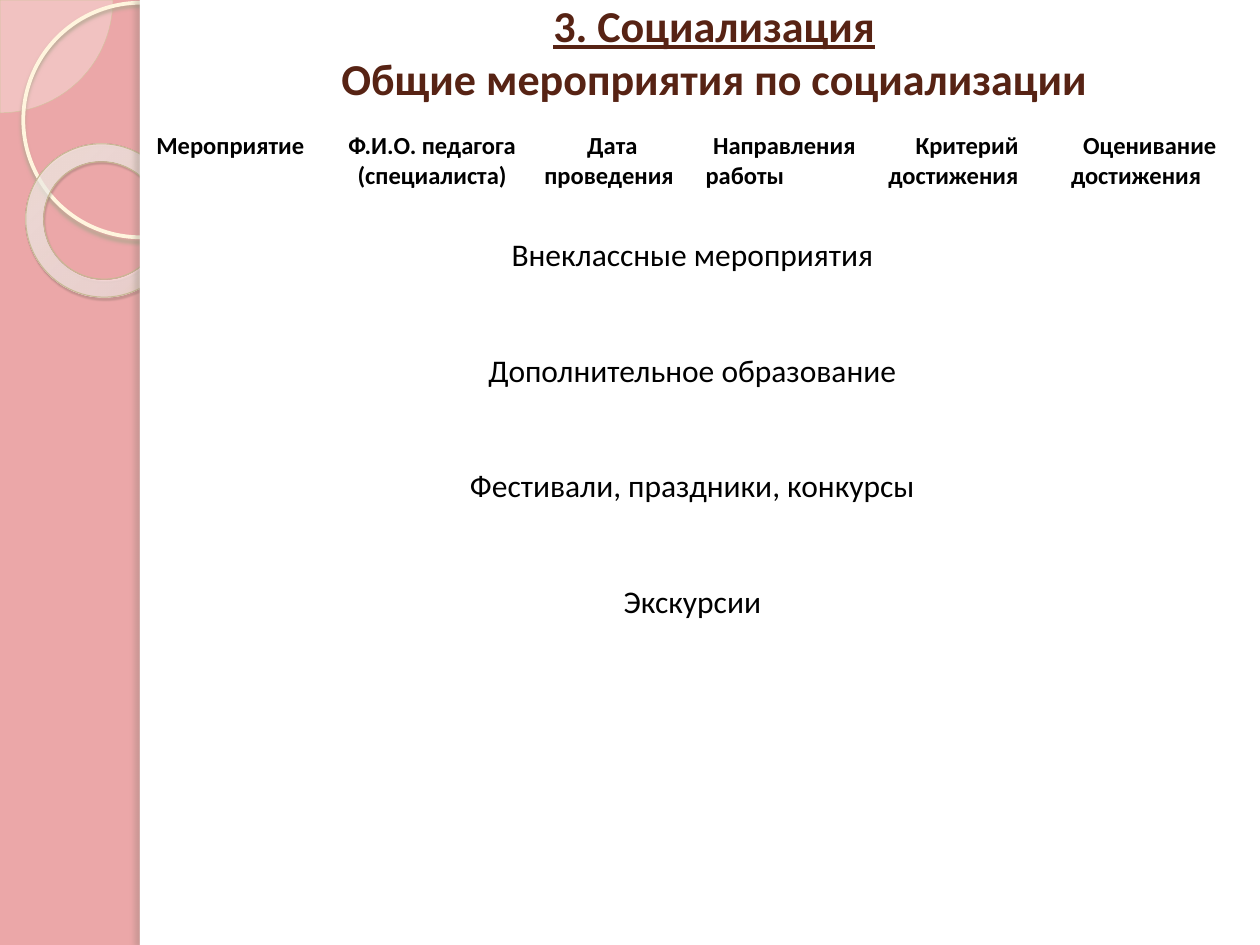
from dataclasses import dataclass
from typing import Optional

from lxml.etree import SubElement
from pptx import Presentation
from pptx.dml.color import RGBColor
from pptx.enum.shapes import MSO_SHAPE
from pptx.enum.text import MSO_ANCHOR, PP_ALIGN
from pptx.oxml import parse_xml
from pptx.oxml.ns import nsdecls, qn
from pptx.util import Pt

COLORS = {
    "background": "EBA7A8", "panel": "FFFFFF", "title": "572314", "text": "000000",
    "pie": "FEFAF4", "pie_line": "D3C39F", "ring_line": "FFF5DE", "donut_line": "C7B893",
    "ring_shadow": "B0A68F", "donut_shadow": "5A5444", "panel_shadow": "736F63",
    "donut_inner": "FFFCF6", "donut_middle": "FFFEFB", "donut_outer": "F0D28E",
}
FONT = "Calibri"
HEADERS = [
    ("Мероприятие",),
    ("Ф.И.О. педагога", "(специалиста)"),
    ("Дата", "проведения"),
    ("Направления", "работы"),
    ("Критерий", "достижения"),
    ("Оценивание", "достижения"),
]
LEFT_LINES = {"Мероприятие", "проведения", "работы", "достижения"}
ACTIVITIES = [
    "Внеклассные мероприятия",
    "Дополнительное образование",
    "Фестивали, праздники, конкурсы",
    "Экскурсии",
]
COLUMN_WIDTHS = [108, 113.76, 92.16, 104.4, 104.4, 104.4]
ROW_HEIGHTS = [60.5, 375.8]


@dataclass
class Shadow:
    color: str
    alpha: int
    blur: float
    distance: float
    angle: int


@dataclass
class Decoration:
    kind: MSO_SHAPE
    left: float
    top: float
    width: float
    height: float
    fill: Optional[str] = None
    alpha: int = 100
    line: Optional[str] = None
    line_width: float = 0
    rotation: float = 0
    adjustments: tuple = ()
    shadow: Optional[Shadow] = None


DECORATIONS = [
    Decoration(MSO_SHAPE.PIE, -64.2, -64.2, 128.7, 128.7, "pie", 33, "pie_line", 0.25,
               adjustments=(0, 54)),
    Decoration(MSO_SHAPE.OVAL, 13.3, 1.6, 134, 134, line="ring_line", line_width=2.15,
               shadow=Shadow("ring_shadow", 85, 2, 2, 90)),
    Decoration(MSO_SHAPE.DONUT, 14.4, 82.5, 88.6, 87, "donut_outer", 100, "donut_line", 0.58,
               38.6, (0.118,), Shadow("donut_shadow", 35, 1, 1.2, 75)),
    Decoration(MSO_SHAPE.RECTANGLE, 79.9, 0, 640.1, 540, "panel"),
    Decoration(MSO_SHAPE.RECTANGLE, 79.9, 0, 5.8, 540, "panel",
               shadow=Shadow("panel_shadow", 25, 3, 3, 180)),
]
DONUT_STOPS = [(0, "donut_inner", 70), (70, "donut_middle", 55), (100, "donut_outer", 60)]


def rgb(name: str) -> RGBColor:
    return RGBColor.from_string(COLORS[name])


def set_alpha(color_element, alpha: int) -> None:
    SubElement(color_element, qn("a:alpha"), val=str(alpha * 1000))


def add_shadow(shape, shadow: Shadow) -> None:
    effects = shape.element.spPr.find(qn("a:effectLst"))
    outer = SubElement(effects, qn("a:outerShdw"), blurRad=str(int(Pt(shadow.blur))),
                       dist=str(int(Pt(shadow.distance))), dir=str(shadow.angle * 60000),
                       algn="tl", rotWithShape="0")
    color = SubElement(outer, qn("a:srgbClr"), val=COLORS[shadow.color])
    set_alpha(color, shadow.alpha)


def set_donut_gradient(shape) -> None:
    stops = "".join(
        f'<a:gs pos="{position * 1000}"><a:srgbClr val="{COLORS[color]}">'
        f'<a:alpha val="{alpha * 1000}"/></a:srgbClr></a:gs>'
        for position, color, alpha in DONUT_STOPS
    )
    gradient = parse_xml(
        f'<a:gradFill {nsdecls("a")} rotWithShape="1"><a:gsLst>{stops}</a:gsLst>'
        '<a:path path="circle"><a:fillToRect l="-408000" t="-50000" r="508000" b="150000"/>'
        '</a:path></a:gradFill>'
    )
    solid = shape.element.spPr.find(qn("a:solidFill"))
    solid.getparent().replace(solid, gradient)


def add_decoration(slide, item: Decoration):
    shape = slide.shapes.add_shape(item.kind, Pt(item.left), Pt(item.top),
                                   Pt(item.width), Pt(item.height))
    shape.rotation = item.rotation
    shape.shadow.inherit = False
    for index, value in enumerate(item.adjustments):
        shape.adjustments[index] = value
    if item.fill:
        shape.fill.solid()
        shape.fill.fore_color.rgb = rgb(item.fill)
        if item.alpha < 100:
            set_alpha(shape.element.spPr.find(qn("a:solidFill"))[0], item.alpha)
    else:
        shape.fill.background()
    if item.line:
        shape.line.color.rgb = rgb(item.line)
        shape.line.width = Pt(item.line_width)
    else:
        shape.line.fill.background()
    if item.shadow:
        add_shadow(shape, item.shadow)
    if item.kind == MSO_SHAPE.DONUT:
        set_donut_gradient(shape)


def format_paragraph(paragraph, size: float, bold: bool, color: str = "text") -> None:
    paragraph.alignment = PP_ALIGN.CENTER
    paragraph.font.name = FONT
    paragraph.font.size = Pt(size)
    paragraph.font.bold = bold
    paragraph.font.color.rgb = rgb(color)


def write_title(slide) -> None:
    title = slide.shapes.title
    title.element.getparent().append(title.element)
    title.left, title.top, title.width, title.height = Pt(113), Pt(9.4), Pt(590.4), Pt(39.6)
    title.text_frame.vertical_anchor = MSO_ANCHOR.MIDDLE
    paragraph = title.text_frame.paragraphs[0]
    format_paragraph(paragraph, 25.2, True, "title")
    heading = paragraph.add_run()
    heading.text = "3. Социализация"
    heading.font.underline = True
    paragraph.add_line_break()
    paragraph.add_run().text = "Общие мероприятия по социализации"


def write_cell(cell, lines, size: float, bold: bool, gap: float = 0) -> None:
    cell.fill.background()
    cell.text_frame.text = "\n".join(lines)
    for paragraph in cell.text_frame.paragraphs:
        format_paragraph(paragraph, size, bold)
        paragraph.space_after = Pt(gap)
        if paragraph.text in LEFT_LINES:
            paragraph.alignment = PP_ALIGN.LEFT


def add_activity_table(slide) -> None:
    table = slide.shapes.add_table(2, len(HEADERS), Pt(82.1), Pt(71.3),
                                   Pt(sum(COLUMN_WIDTHS)), Pt(sum(ROW_HEIGHTS))).table
    for column, width in zip(table.columns, COLUMN_WIDTHS):
        column.width = Pt(width)
    for row, height in zip(table.rows, ROW_HEIGHTS):
        row.height = Pt(height)
    for index, lines in enumerate(HEADERS):
        write_cell(table.cell(0, index), lines, 14, True)
    body = table.cell(1, 0)
    body.merge(table.cell(1, len(HEADERS) - 1))
    write_cell(body, ACTIVITIES, 18, False, gap=44)


def main() -> None:
    presentation = Presentation()
    presentation.slide_width, presentation.slide_height = Pt(720), Pt(540)
    slide = presentation.slides.add_slide(presentation.slide_layouts[5])
    slide.background.fill.solid()
    slide.background.fill.fore_color.rgb = rgb("background")
    for item in DECORATIONS:
        add_decoration(slide, item)
    write_title(slide)
    add_activity_table(slide)
    presentation.save("out.pptx")


if __name__ == "__main__":
    main()
